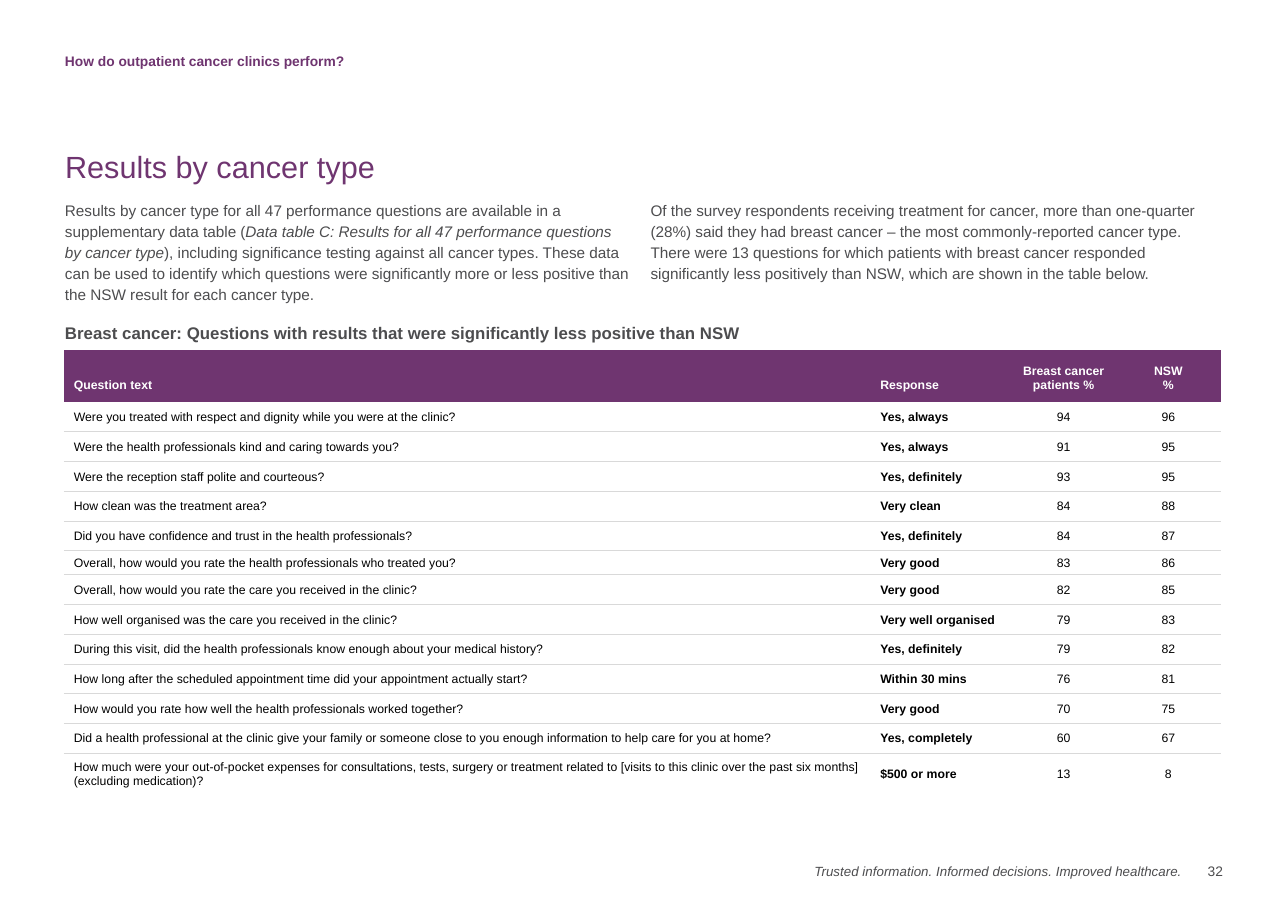
from lxml import etree
from pptx import Presentation
from pptx.dml.color import RGBColor
from pptx.enum import text as t
from pptx.oxml import ns
from pptx.util import Inches, Pt

COLOURS = {"purple": "6F3570", "grey": "4D4D4F", "rule": "D9D9D9", "white": "FFFFFF", "black": "000000"}
NO_STYLE = "{2D5ABB26-0587-4C30-8999-92F81FD0307C}"
LEFT, CENTER, RIGHT = t.PP_ALIGN.LEFT, t.PP_ALIGN.CENTER, t.PP_ALIGN.RIGHT
TOP, MIDDLE, BOTTOM = t.MSO_ANCHOR.TOP, t.MSO_ANCHOR.MIDDLE, t.MSO_ANCHOR.BOTTOM

# text, (left, top, width, height), anchor, alignment, font format
LABELS = [
    ("Trusted information. Informed decisions. Improved healthcare.", (6.99, 7.79, 3.74, 0.24),
     MIDDLE, RIGHT, {"size": 8.7, "color": "grey", "italic": True}),
    ("Results by cancer type", (0.59, 0.98, 10.51, 0.7), BOTTOM, LEFT, {"size": 20, "color": "purple"}),
    ("32", (10.72, 7.79, 0.38, 0.24), MIDDLE, RIGHT, {"size": 9, "color": "grey"}),
    ("How do outpatient cancer clinics perform?", (0.59, 0.46, 5.57, 0.18),
     MIDDLE, LEFT, {"size": 9, "color": "purple", "bold": True}),
    ("Breast cancer: Questions with results that were significantly less positive than NSW",
     (0.59, 2.9, 10.43, 0.3), TOP, LEFT, {"size": 11, "color": "grey", "bold": True}),
]

# Each paragraph is a list of (text, italic) runs
INTRO = [
    [("Results by cancer type for all 47 performance questions are available in a supplementary data table (", False),
     ("Data table C: Results for all 47 performance questions by cancer type", True),
     ("), including significance testing against all cancer types. These data can be used to identify which "
      "questions were significantly more or less positive than the NSW result for each cancer type.", False)],
    [("Of the survey respondents receiving treatment for cancer, more than one-quarter (28%) said they had "
      "breast cancer – the most commonly-reported cancer type. There were 13 questions for which patients "
      "with breast cancer responded significantly less positively than NSW, which are shown in the table below.",
      False)],
]
INTRO_BOX = (0.59, 1.8, 10.43, 1.03)
INTRO_GAP = 0.2
LINE_SPACING = 1.15

HEADER = ("Question text", "Response", "Breast cancer patients %", "NSW\v%")
RESULTS = [
    ("Were you treated with respect and dignity while you were at the clinic?", "Yes, always", 94, 96),
    ("Were the health professionals kind and caring towards you?", "Yes, always", 91, 95),
    ("Were the reception staff polite and courteous?", "Yes, definitely", 93, 95),
    ("How clean was the treatment area?", "Very clean", 84, 88),
    ("Did you have confidence and trust in the health professionals?", "Yes, definitely", 84, 87),
    ("Overall, how would you rate the health professionals who treated you?", "Very good", 83, 86),
    ("Overall, how would you rate the care you received in the clinic?", "Very good", 82, 85),
    ("How well organised was the care you received in the clinic?", "Very well organised", 79, 83),
    ("During this visit, did the health professionals know enough about your medical history?",
     "Yes, definitely", 79, 82),
    ("How long after the scheduled appointment time did your appointment actually start?",
     "Within 30 mins", 76, 81),
    ("How would you rate how well the health professionals worked together?", "Very good", 70, 75),
    ("Did a health professional at the clinic give your family or someone close to you enough information "
     "to help care for you at home?", "Yes, completely", 60, 67),
    ("How much were your out-of-pocket expenses for consultations, tests, surgery or treatment related to "
     "[visits to this clinic over the past six months] (excluding medication)?", "$500 or more", 13, 8),
]
TABLE_AT = (0.58, 3.18)
COLUMN_WIDTHS = (7.37, 1.23, 0.95, 0.95)
COLUMN_INSETS = (0.09, 0.04, 0.01, 0.01)
COLUMN_ALIGNMENTS = (LEFT, LEFT, CENTER, CENTER)
HEADER_HEIGHTS = [0.38, 0.09]
ROW_HEIGHTS = HEADER_HEIGHTS + [0.27] * 5 + [0.22] + [0.27] * 6 + [0.38]


def rgb(name):
    return RGBColor.from_string(COLOURS[name])


def format_font(font, size, color, **styles):
    font.name, font.size, font.color.rgb = "Arial", Pt(size), rgb(color)
    for name, value in styles.items():
        setattr(font, name, value)


def add_text_frame(slide, box, anchor=TOP):
    frame = slide.shapes.add_textbox(*map(Inches, box)).text_frame
    settings = {"word_wrap": True, "vertical_anchor": anchor, "margin_left": 0,
                "margin_top": 0, "margin_right": 0, "margin_bottom": 0}
    for name, value in settings.items():
        setattr(frame, name, value)
    return frame


def add_label(slide, text, box, anchor, alignment, font_format):
    paragraph = add_text_frame(slide, box, anchor).paragraphs[0]
    paragraph.alignment = alignment
    if anchor == TOP:
        paragraph.line_spacing = LINE_SPACING
    run = paragraph.add_run()
    run.text = text
    format_font(run.font, **font_format)


def add_intro(slide):
    frame = add_text_frame(slide, INTRO_BOX)
    body = frame._txBody.bodyPr
    body.set("numCol", "2")
    body.set("spcCol", str(Inches(INTRO_GAP)))
    for index, runs in enumerate(INTRO):
        paragraph = frame.add_paragraph() if index else frame.paragraphs[0]
        paragraph.line_spacing = LINE_SPACING
        for text, italic in runs:
            run = paragraph.add_run()
            run.text = text
            format_font(run.font, 10, "grey", italic=italic)


def add_bottom_rule(cell):
    line = etree.Element(ns.qn("a:lnB"), w=str(Pt(0.5)))
    fill = etree.SubElement(line, ns.qn("a:solidFill"))
    etree.SubElement(fill, ns.qn("a:srgbClr"), val=COLOURS["rule"])
    cell._tc.get_or_add_tcPr().insert(0, line)


def fill_cell(cell, value, column, is_header):
    settings = {"margin_left": Inches(COLUMN_INSETS[column]), "margin_top": Inches(0.01),
                "margin_right": Inches(0.01), "margin_bottom": 0,
                "vertical_anchor": BOTTOM if is_header else MIDDLE}
    for name, setting in settings.items():
        setattr(cell, name, setting)
    if is_header:
        cell.fill.solid()
        cell.fill.fore_color.rgb = rgb("purple")
    else:
        cell.fill.background()
    paragraph = cell.text_frame.paragraphs[0]
    if value == "":
        etree.SubElement(paragraph._p, ns.qn("a:endParaRPr"), sz="400")
        return
    paragraph.text = str(value)
    paragraph.alignment = COLUMN_ALIGNMENTS[column]
    for run in paragraph.runs:
        format_font(run.font, 8, "white" if is_header else "black", bold=is_header or column == 1)


def add_results_table(slide):
    rows = [HEADER, ("",) * len(HEADER)] + RESULTS
    size = (sum(COLUMN_WIDTHS), sum(ROW_HEIGHTS))
    table = slide.shapes.add_table(len(rows), len(HEADER), *map(Inches, TABLE_AT + size)).table
    table.first_row = table.horz_banding = False
    table._tbl.tblPr.find(ns.qn("a:tableStyleId")).text = NO_STYLE
    for column, width in zip(table.columns, COLUMN_WIDTHS):
        column.width = Inches(width)
    for index, (values, height) in enumerate(zip(rows, ROW_HEIGHTS)):
        table.rows[index].height = Inches(height)
        is_header = index < len(HEADER_HEIGHTS)
        for column, value in enumerate(values):
            cell = table.cell(index, column)
            fill_cell(cell, value, column, is_header)
            if not is_header and index < len(rows) - 1:
                add_bottom_rule(cell)


def main():
    presentation = Presentation()
    presentation.slide_width, presentation.slide_height = Inches(11.69), Inches(8.27)
    slide = presentation.slides.add_slide(presentation.slide_layouts[6])
    for label in LABELS:
        add_label(slide, *label)
    add_intro(slide)
    add_results_table(slide)
    presentation.save("out.pptx")


if __name__ == "__main__":
    main()
